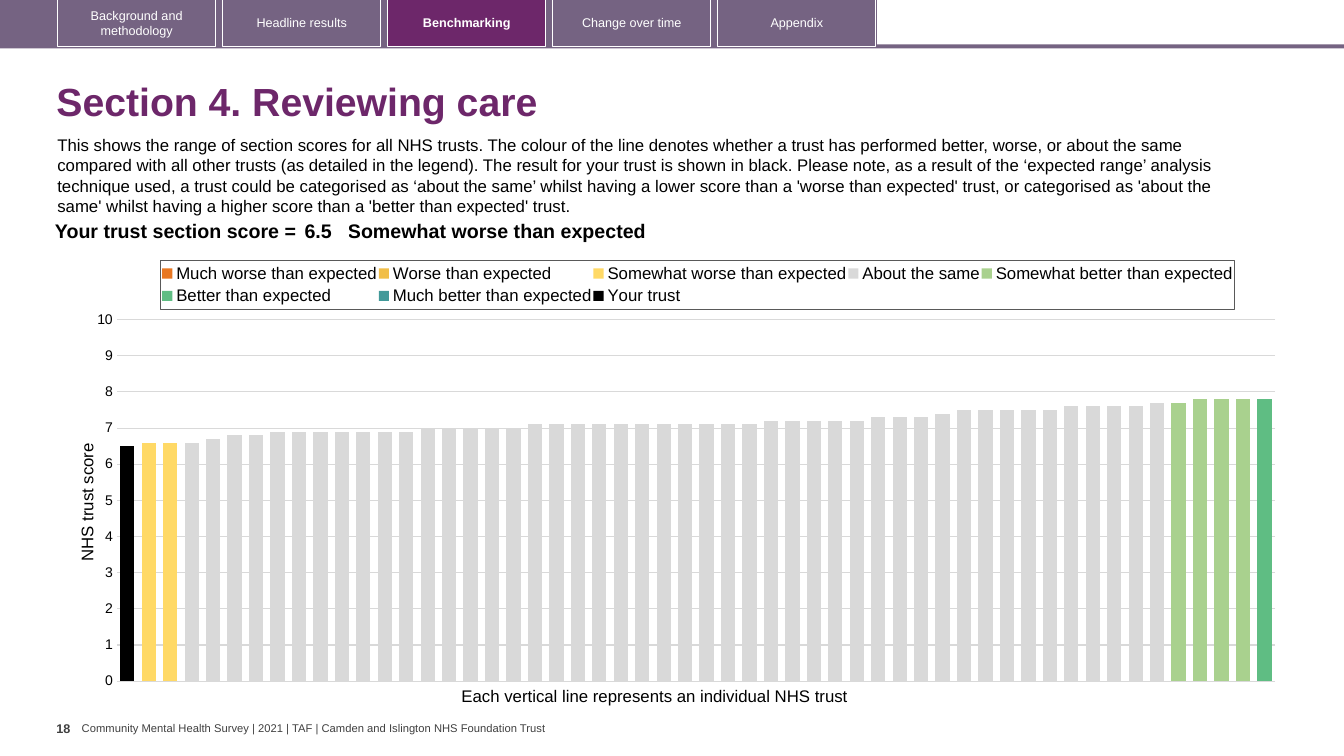
import copy
from dataclasses import dataclass

import lxml.etree
import pptx
import pptx.chart.data
import pptx.dml.color
import pptx.enum.chart
import pptx.enum.shapes
import pptx.enum.text
import pptx.oxml
import pptx.oxml.ns
import pptx.util

SLIDE_WIDTH, SLIDE_HEIGHT = pptx.util.Inches(13.33), pptx.util.Inches(7.5)
ALIGN, ANCHOR = pptx.enum.text.PP_ALIGN, pptx.enum.text.MSO_ANCHOR
qn = pptx.oxml.ns.qn


@dataclass(frozen=True)
class Theme:
    font: str = "Arial"
    plum: str = "6D276A"
    mauve: str = "756382"
    white: str = "FFFFFF"
    ink: str = "000000"
    footer: str = "404040"
    grid: str = "D9D9D9"
    frame: str = "595959"
    title: int = 28
    score: int = 14
    body: int = 12
    axis: int = 10
    tab: int = 9
    small: int = 8


THEME = Theme()

TABS = ["Background and methodology", "Headline results", "Benchmarking",
        "Change over time", "Appendix"]
INTRO = ("This shows the range of section scores for all NHS trusts. The colour of the line "
         "denotes whether a trust has performed better, worse, or about the same compared with "
         "all other trusts (as detailed in the legend). The result for your trust is shown in "
         "black. Please note, as a result of the ‘expected range’ analysis technique used, a "
         "trust could be categorised as ‘about the same’ whilst having a lower score than a "
         "'worse than expected' trust, or categorised as 'about the same' whilst having a "
         "higher score than a 'better than expected' trust.")
FOOTER = "Community Mental Health Survey | 2021 | TAF | Camden and Islington NHS Foundation Trust"

# Score and how many trusts hold it, in rising order
SCORE_RUNS = [(6.5, 1), (6.6, 3), (6.7, 1), (6.8, 2), (6.9, 7), (7, 5), (7.1, 11), (7.2, 5),
              (7.3, 3), (7.4, 1), (7.5, 5), (7.6, 4), (7.7, 2), (7.8, 4)]
# Band, how many trusts fall in it, colour
BANDS = [("Much worse than expected", 0, "E87722"),
         ("Worse than expected", 0, "F1BE48"),
         ("Somewhat worse than expected", 3, "FFD966"),
         ("About the same", 46, "D9D9D9"),
         ("Somewhat better than expected", 4, "A9D18E"),
         ("Better than expected", 1, "5FBD83"),
         ("Much better than expected", 0, "419999")]


def area(left, top, width, height):
    """Percentages of the slide turned into lengths."""
    return [round(side * share / 100) for side, share in
            zip((SLIDE_WIDTH, SLIDE_HEIGHT) * 2, (left, top, width, height))]


def colour(value):
    return pptx.dml.color.RGBColor.from_string(value)


def assign(target, **formats):
    for name, value in formats.items():
        setattr(target, name, value)


def style_font(font, size, ink=THEME.ink, bold=False):
    assign(font, name=THEME.font, size=pptx.util.Pt(size), bold=bold)
    font.color.rgb = colour(ink)


def write(frame, text, size, ink=THEME.ink, bold=False, align=ALIGN.LEFT, **frame_formats):
    assign(frame, word_wrap=True, **frame_formats)
    paragraph = frame.paragraphs[0]
    paragraph.alignment = align
    run = paragraph.add_run()
    run.text = text
    style_font(run.font, size, ink, bold)
    return paragraph


def add_text(slide, place, *text, **formats):
    write(slide.shapes.add_textbox(*area(*place)).text_frame, *text, **formats)


def add_bar(slide, place, fill=None, outline=None):
    bar = slide.shapes.add_shape(pptx.enum.shapes.MSO_SHAPE.RECTANGLE, *area(*place))
    bar.shadow.inherit = False
    if fill:
        bar.fill.solid()
        bar.fill.fore_color.rgb = colour(fill)
    else:
        bar.fill.background()
    if outline:
        bar.line.color.rgb = colour(outline)
        bar.line.width = pptx.util.Pt(0.75)
    else:
        bar.line.fill.background()
    return bar


def add_navigation(slide, current):
    add_bar(slide, (0, 5.87, 100, 0.53), THEME.mauve)
    add_bar(slide, (0, 0, 65.25, 6.27), THEME.mauve)
    for column, label in enumerate(TABS):
        active = label == current
        tab = add_bar(slide, (4.28 + 12.28 * column, -0.13, 11.78, 6.27),
                      THEME.plum if active else None, THEME.white)
        write(tab.text_frame, label, THEME.tab, THEME.white, active, ALIGN.CENTER,
              vertical_anchor=ANCHOR.MIDDLE)


def add_score_row(slide):
    table = slide.shapes.add_table(1, 3, *area(2.63, 28.67, 87.7, 2.93)).table
    assign(table, first_row=False, horz_banding=False)
    entries = [("Your trust section score =", 19.73, 0.04, ALIGN.RIGHT),
               ("6.5", 3.53, 0.04, ALIGN.LEFT),
               ("Somewhat worse than expected", 64.44, 0, ALIGN.LEFT)]
    for column, (text, width, side, align) in enumerate(entries):
        table.columns[column].width = round(SLIDE_WIDTH * width / 100)
        cell = table.cell(0, column)
        cell.fill.background()
        inset, edge = pptx.util.Inches(side), pptx.util.Inches(0.04)
        assign(cell, margin_left=inset, margin_right=inset, margin_top=edge, margin_bottom=edge)
        write(cell.text_frame, text, THEME.score, bold=True, align=align)


def set_layout(parent, shares, after=None, inner=False):
    """Fix a chart part at shares of the chart's size."""
    for old in parent.findall(qn("c:layout")):
        parent.remove(old)
    layout = lxml.etree.Element(qn("c:layout"))
    manual = lxml.etree.SubElement(layout, qn("c:manualLayout"))
    settings = [("layoutTarget", "inner")] if inner else []
    settings += [("xMode", "edge"), ("yMode", "edge")] + list(zip("xywh", shares))
    for tag, value in settings:
        lxml.etree.SubElement(manual, qn("c:" + tag)).set("val", str(value))
    if after:
        parent.find(qn(after)).addnext(layout)
    else:
        parent.insert(0, layout)


def move_last_series_to_right_axis(plot_area):
    bars = plot_area.find(qn("c:barChart"))
    right_bars = copy.deepcopy(bars)
    bars.remove(bars.findall(qn("c:ser"))[-1])
    for series in right_bars.findall(qn("c:ser"))[:-1]:
        right_bars.remove(series)
    bars.addnext(right_bars)
    category, value = plot_area.find(qn("c:catAx")), plot_area.find(qn("c:valAx"))
    right_category, right_value = copy.deepcopy(category), copy.deepcopy(value)
    value.addnext(right_value)
    right_value.addnext(right_category)
    for tag in ("c:title", "c:majorGridlines"):
        right_value.remove(right_value.find(qn(tag)))
    for tag, setting in (("axPos", "r"), ("tickLblPos", "none"), ("crosses", "max")):
        right_value.find(qn("c:" + tag)).set("val", setting)
    ids = {axis.find(qn("c:axId")).get("val"): str(number)
           for number, axis in enumerate((category, value), 5001)}
    for part in (right_bars, right_category, right_value):
        for link in part.findall(qn("c:axId")) + part.findall(qn("c:crossAx")):
            link.set("val", ids[link.get("val")])


def add_score_chart(slide):
    scores = [score for score, count in SCORE_RUNS for _ in range(count)]
    chart_data = pptx.chart.data.CategoryChartData()
    chart_data.categories = [str(number + 1) for number in range(len(scores))]
    start = 0
    for band, count, _ in BANDS:
        chart_data.add_series(band, [score if start <= rank < start + count else None
                                     for rank, score in enumerate(scores)])
        start += count
    chart_data.add_series("Your trust", scores[:1] + [None] * (len(scores) - 1))
    chart = slide.shapes.add_chart(pptx.enum.chart.XL_CHART_TYPE.COLUMN_CLUSTERED,
                                   *area(5.03, 32.93, 91.13, 59.2), chart_data).chart
    assign(chart, has_title=False, has_legend=True)
    style_font(chart.font, THEME.axis)
    assign(chart.plots[0], gap_width=50, overlap=100, vary_by_categories=False)
    for series, fill in zip(chart.plots[0].series, [band[2] for band in BANDS] + [THEME.ink]):
        series.format.fill.solid()
        series.format.fill.fore_color.rgb = colour(fill)

    # Axes
    chart.category_axis.visible = False
    axis = chart.value_axis
    no_tick = pptx.enum.chart.XL_TICK_MARK.NONE
    assign(axis, minimum_scale=0, maximum_scale=10, major_unit=1, has_major_gridlines=True,
           major_tick_mark=no_tick, minor_tick_mark=no_tick)
    axis.format.line.fill.background()
    axis.major_gridlines.format.line.color.rgb = colour(THEME.grid)
    axis.major_gridlines.format.line.width = pptx.util.Pt(0.75)
    style_font(axis.tick_labels.font, THEME.axis)
    write(axis.axis_title.text_frame, "NHS trust score", THEME.body)
    title = axis.axis_title._element
    title.find(".//" + qn("a:bodyPr")).set("rot", "-5400000")
    set_layout(title, (0.005, 0.427), after="c:tx")

    # Framed legend
    assign(chart.legend, position=pptx.enum.chart.XL_LEGEND_POSITION.TOP, include_in_layout=False)
    style_font(chart.legend.font, THEME.body)
    legend = chart.legend._element
    set_layout(legend, (0.076, 0.025, 0.877, 0.11), after="c:legendPos")
    legend.find(qn("c:txPr")).addprevious(pptx.oxml.parse_xml(
        f'<c:spPr {pptx.oxml.ns.nsdecls("c", "a")}><a:ln w="9525"><a:solidFill>'
        f'<a:srgbClr val="{THEME.frame}"/></a:solidFill></a:ln></c:spPr>'))

    plot_area = chart.element.find(".//" + qn("c:plotArea"))
    set_layout(plot_area, (0.04, 0.158, 0.946, 0.808), inner=True)
    move_last_series_to_right_axis(plot_area)


def main():
    deck = pptx.Presentation()
    assign(deck, slide_width=SLIDE_WIDTH, slide_height=SLIDE_HEIGHT)
    slide = deck.slides.add_slide(deck.slide_layouts.get_by_name("Title Only"))

    # Footer and navigation
    add_text(slide, (6.08, 95.47, 35.05, 1.73), FOOTER, THEME.small, THEME.footer, margin_left=0,
             margin_right=0, margin_top=0, margin_bottom=0, vertical_anchor=ANCHOR.MIDDLE)
    add_navigation(slide, "Benchmarking")

    # Heading and introduction
    heading = slide.shapes.title
    assign(heading, **dict(zip(("left", "top", "width", "height"), area(3.45, 8.93, 93.68, 9.6))))
    write(heading.text_frame, "Section 4. Reviewing care", THEME.title, THEME.plum, True,
          vertical_anchor=ANCHOR.MIDDLE).line_spacing = 0.9
    add_text(slide, (4.2, 94.67, 1.88, 5.33), "18", THEME.tab, THEME.footer, bold=True,
             margin_left=0, margin_right=0)
    add_text(slide, (3.53, 17.2, 90.98, 12.13), INTRO, THEME.body)

    # Scores
    add_text(slide, (33.6, 90, 30.83, 4),
             "Each vertical line represents an individual NHS trust", THEME.body)
    add_score_chart(slide)
    add_score_row(slide)
    deck.save("out.pptx")


if __name__ == "__main__":
    main()
